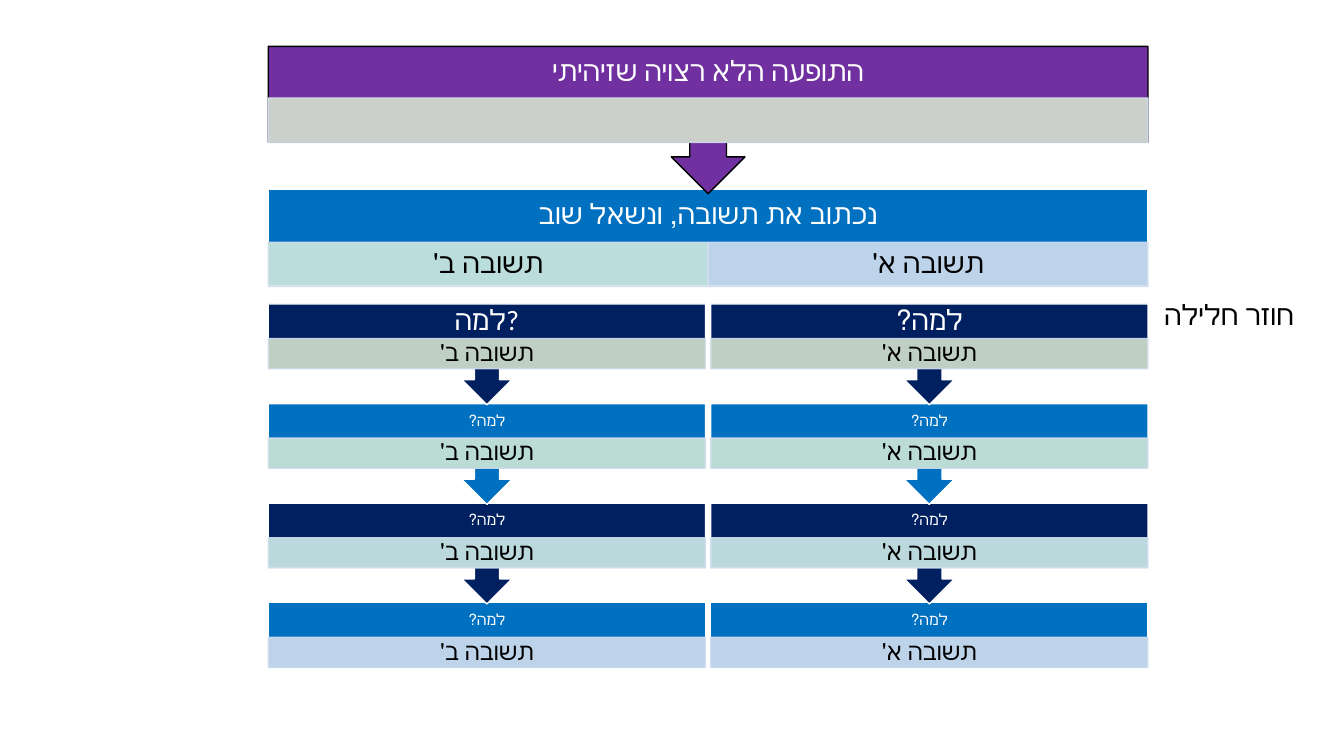
import pptx
import pptx.dml.color
import pptx.enum.shapes
import pptx.enum.text
import pptx.oxml
import pptx.oxml.ns
import pptx.util
from pptx.util import Cm

SHAPE = pptx.enum.shapes.MSO_SHAPE
ANCHOR = pptx.enum.text.MSO_ANCHOR
NAVY, BLUE, PURPLE = "002060", "0070C0", "7030A0"
WHITE, BLACK = "FFFFFF", "000000"
PALE_BLUE, PALE_GREEN = "D2DEEF", "D5E3CF"

LEFT, FULL_WIDTH = 6.76, 22.17
COLUMN_WIDTH, RIGHT_COLUMN = 11.02, 17.91
STEP_TOP, STEP_PITCH = 7.66, 2.51
# Header colour, answer colour, header size and header inset of each step
STEPS = [
    (NAVY, PALE_GREEN, 20, 0.41),
    (BLUE, "D0E7D8", 11, 0.23),
    (NAVY, "D0ECEA", 11, 0.23),
    (BLUE, PALE_BLUE, 11, 0.23),
]


def rgb(color):
    return pptx.dml.color.RGBColor.from_string(color)


def make_translucent(fill_format):
    color = fill_format._xPr.find(".//" + pptx.oxml.ns.qn("a:srgbClr"))
    alpha = pptx.oxml.parse_xml(
        f'<a:alpha {pptx.oxml.ns.nsdecls("a")} val="90000"/>')
    color.append(alpha)


def add_block(shapes, kind, left, top, width, height, fill, line):
    block = shapes.add_shape(kind, Cm(left), Cm(top), Cm(width), Cm(height))
    block.shadow.inherit = False
    block.fill.solid()
    block.fill.fore_color.rgb = rgb(fill)
    block.line.color.rgb = rgb(line)
    block.line.width = pptx.util.Pt(1)
    return block


def add_text(shapes, left, top, width, height, text, size, color,
             inset_x, inset_y, font="Calibri", rtl=True,
             anchor=ANCHOR.MIDDLE, spacing=0.9):
    box = shapes.add_textbox(Cm(left), Cm(top), Cm(width), Cm(height))
    frame = box.text_frame
    frame_format = {
        "word_wrap": True, "vertical_anchor": anchor,
        "margin_left": Cm(inset_x), "margin_right": Cm(inset_x),
        "margin_top": Cm(inset_y), "margin_bottom": Cm(inset_y),
    }
    for name, value in frame_format.items():
        setattr(frame, name, value)
    paragraph = frame.paragraphs[0]
    paragraph.alignment = pptx.enum.text.PP_ALIGN.CENTER
    paragraph.line_spacing = spacing
    if rtl:
        paragraph._p.get_or_add_pPr().set("rtl", "1")
    run = paragraph.add_run()
    run.text = text
    for name, value in {"name": font, "size": pptx.util.Pt(size)}.items():
        setattr(run.font, name, value)
    run.font.color.rgb = rgb(color)
    return box


def add_callout(shapes, left, top, width, height, fill, line=WHITE):
    callout = add_block(shapes, SHAPE.UP_ARROW_CALLOUT,
                        left, top, width, height, fill, line)
    callout.rotation = 180


def add_header(shapes, left, top, width, height, text, size, inset, **style):
    add_text(shapes, left, top, width, height, text, size, WHITE,
             inset, inset, **style)


def add_answer(shapes, left, top, width, height, fill):
    answer = add_block(shapes, SHAPE.RECTANGLE,
                       left, top, width, height, fill, PALE_BLUE)
    make_translucent(answer.fill)
    make_translucent(answer.line.fill)


def add_opening(slide):
    shapes = slide.shapes.add_group_shape().shapes
    # First answers
    top, half = 4.78, FULL_WIDTH / 2
    add_block(shapes, SHAPE.RECTANGLE, LEFT, top, FULL_WIDTH, 2.41, BLUE, WHITE)
    add_header(shapes, LEFT, top, FULL_WIDTH, 1.3,
               "נכתוב את תשובה, ונשאל שוב", 20, 0.41, font="Roboto")
    for left, text, fill in ((LEFT + half, "תשובה א'", PALE_BLUE),
                             (LEFT, "תשובה ב'", "D0EAE1")):
        place = (left, 6.11, half, 1.11)
        add_answer(shapes, *place, fill)
        add_text(shapes, *place, text, 20, BLACK, 0.41, 0.08)
    # Phenomenon, with an empty band to fill in
    top = 1.17
    add_callout(shapes, LEFT, top, FULL_WIDTH, 3.71, PURPLE, BLACK)
    add_header(shapes, LEFT, top, FULL_WIDTH, 1.3,
               "התופעה הלא רצויה שזיהיתי", 20, 0.41)
    add_answer(shapes, LEFT, top + 1.3, FULL_WIDTH, 1.12, PALE_GREEN)


def add_why_chain(slide, left, answer_text, first_rtl):
    shapes = slide.shapes.add_group_shape().shapes
    last = len(STEPS) - 1
    # Lower steps go behind the arrows of the steps above
    for index in range(last, -1, -1):
        fill, answer_fill, size, inset = STEPS[index]
        top = STEP_TOP + index * STEP_PITCH
        if index == last:
            add_block(shapes, SHAPE.RECTANGLE,
                      left, top, COLUMN_WIDTH, 1.65, fill, WHITE)
        else:
            add_callout(shapes, left, top, COLUMN_WIDTH, 2.54, fill)
        add_header(shapes, left, top, COLUMN_WIDTH, 0.88, "למה?", size, inset,
                   rtl=first_rtl or index > 0)
        place = (left, top + 0.87, COLUMN_WIDTH, 0.76)
        add_answer(shapes, *place, answer_fill)
        add_text(shapes, *place, answer_text, 17, BLACK, 0.33, 0.05)


def add_repeat_note(slide):
    note = add_text(slide.shapes, 28.5, 7.42, 4.95, 0.99, "חוזר חלילה",
                    20, BLACK, 0.15, 0.08,
                    rtl=False, anchor=ANCHOR.TOP, spacing=1.0)
    note.text_frame.auto_size = pptx.enum.text.MSO_AUTO_SIZE.SHAPE_TO_FIT_TEXT


def main():
    deck = pptx.Presentation()
    deck.slide_width, deck.slide_height = Cm(33.87), Cm(19.05)
    slide = deck.slides.add_slide(deck.slide_layouts[6])
    add_opening(slide)
    add_repeat_note(slide)
    add_why_chain(slide, RIGHT_COLUMN, "תשובה א'", True)
    add_why_chain(slide, LEFT, "תשובה ב'", False)
    deck.save("out.pptx")


if __name__ == "__main__":
    main()
